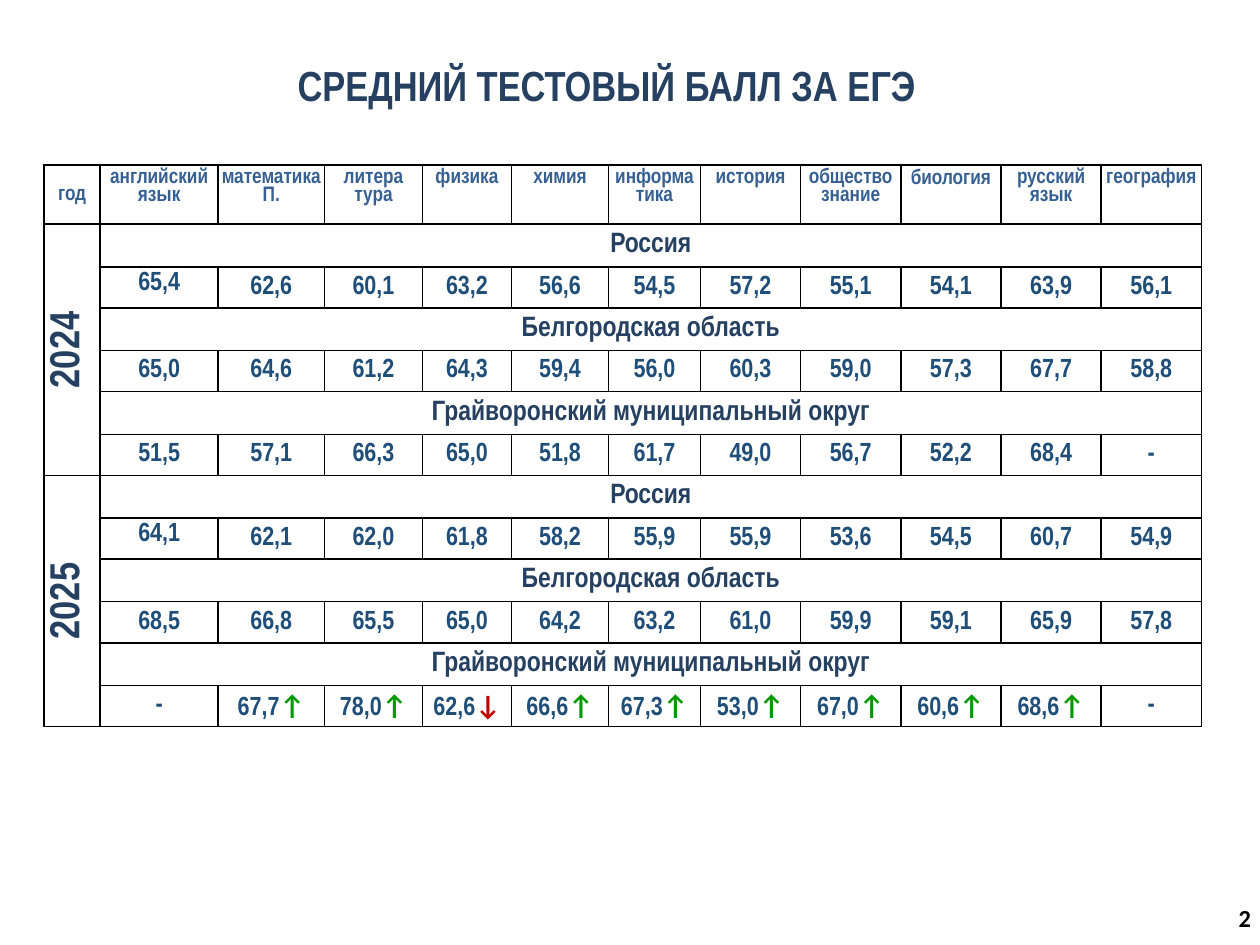
from dataclasses import dataclass

from pptx import Presentation
from pptx.dml.color import RGBColor
from pptx.enum.text import MSO_ANCHOR, PP_ALIGN
from pptx.oxml import parse_xml
from pptx.oxml.ns import nsdecls
from pptx.util import Cm, Pt

TITLE = "СРЕДНИЙ ТЕСТОВЫЙ БАЛЛ ЗА ЕГЭ"
PAGE_NUMBER = "2"
YEAR_HEADING = "год"
SUBJECTS = [
    ("английский язык", 2.38), ("математика\nП.", 2.14), ("литера\nтура", 1.98),
    ("физика", 1.79), ("химия", 1.96), ("информа\vтика", 1.85),
    ("история", 2.02), ("общество\vзнание", 2.02), ("биология", 2.02),
    ("русский язык", 2.02), ("география", 2.02),
]
RUSSIA, REGION, DISTRICT = (
    "Россия", "Белгородская область", "Грайворонский муниципальный округ")
SCORES = {
    "2024": {
        RUSSIA: "65,4 62,6 60,1 63,2 56,6 54,5 57,2 55,1 54,1 63,9 56,1",
        REGION: "65,0 64,6 61,2 64,3 59,4 56,0 60,3 59,0 57,3 67,7 58,8",
        DISTRICT: "51,5 57,1 66,3 65,0 51,8 61,7 49,0 56,7 52,2 68,4 -",
    },
    "2025": {
        RUSSIA: "64,1 62,1 62,0 61,8 58,2 55,9 55,9 53,6 54,5 60,7 54,9",
        REGION: "68,5 66,8 65,5 65,0 64,2 63,2 61,0 59,9 59,1 65,9 57,8",
        DISTRICT: "- 67,7↑ 78,0↑ 62,6↓ 66,6↑ 67,3↑ 53,0↑ 67,0↑ 60,6↑ 68,6↑ -",
    },
}
YEAR_WIDTH = 1.13
HEADER_HEIGHT, VALUE_HEIGHT = 1.19, 0.83
AREA_HEIGHTS = {RUSSIA: 0.75, REGION: 0.75, DISTRICT: 0.83}


@dataclass(frozen=True)
class Style:
    """Face, size and colour of one kind of text."""
    face: str
    size: int
    color: str


@dataclass(frozen=True)
class Theme:
    """Text styles and line settings of the slide."""
    title: Style = Style("Arial Narrow", 24, "254061")
    subject: Style = Style("Arial Narrow", 12, "376092")
    area: Style = Style("Arial Narrow", 16, "254061")
    score: Style = Style("Arial Narrow", 15, "1F4E79")
    rise: Style = Style("Calibri", 16, "009900")
    fall: Style = Style("Calibri", 16, "C00000")
    page: Style = Style("Calibri", 14, "000000")
    border: str = "000000"
    border_width: int = Pt(1)


THEME = Theme()
TRENDS = {"↑": THEME.rise, "↓": THEME.fall}


def apply_style(font, style):
    """Give a font its face, size, weight and colour."""
    font.name, font.size, font.bold = style.face, Pt(style.size), True
    font.color.rgb = RGBColor.from_string(style.color)


def write(frame, text, style, align=PP_ALIGN.CENTER, spacing=None):
    """Fill a text frame with uniformly styled paragraphs."""
    frame.text = text
    for paragraph in frame.paragraphs:
        paragraph.alignment = align
        paragraph.line_spacing = spacing
        apply_style(paragraph.font, style)


def write_score(frame, score):
    """Write a score and its trend arrow, if it has one."""
    if score[-1] not in TRENDS:
        write(frame, score, THEME.score)
        return
    paragraph = frame.paragraphs[0]
    paragraph.alignment = PP_ALIGN.CENTER
    for text, style in ((score[:-1], THEME.score), (score[-1], TRENDS[score[-1]])):
        run = paragraph.add_run()
        run.text = text
        apply_style(run.font, style)


def add_text(slide, box, text, style, align):
    """Add a wrapped text box centred vertically."""
    frame = slide.shapes.add_textbox(*map(Cm, box)).text_frame
    frame.word_wrap = True
    frame.vertical_anchor = MSO_ANCHOR.MIDDLE
    write(frame, text, style, align)
    return frame


def format_cell(cell):
    """Clear a cell's fill and give it margins and four borders."""
    cell.fill.background()
    cell.vertical_anchor = MSO_ANCHOR.MIDDLE
    cell.margin_left = cell.margin_right = 0
    cell.margin_top = cell.margin_bottom = Cm(0.09)
    properties = cell._tc.get_or_add_tcPr()
    for position, side in enumerate("LRTB"):
        line = parse_xml(f'<a:ln{side} {nsdecls("a")} w="{THEME.border_width}">'
                         f'<a:solidFill><a:srgbClr val="{THEME.border}"/></a:solidFill>'
                         f'</a:ln{side}>')
        properties.insert(position, line)


def add_scores(slide):
    """Add the table of average scores."""
    widths = [YEAR_WIDTH] + [width for _, width in SUBJECTS]
    heights = [HEADER_HEIGHT] + [
        height for areas in SCORES.values() for area in areas
        for height in (AREA_HEIGHTS[area], VALUE_HEIGHT)]
    table = slide.shapes.add_table(
        len(heights), len(widths), Cm(0.89), Cm(3.33),
        Cm(sum(widths)), Cm(sum(heights))).table
    table.first_row = table.horz_banding = False
    for column, width in zip(table.columns, widths):
        column.width = Cm(width)
    for row, height in zip(table.rows, heights):
        row.height = Cm(height)
    for cell in table.iter_cells():
        format_cell(cell)

    write(table.cell(0, 0).text_frame, YEAR_HEADING, THEME.subject)
    for column, (subject, _) in enumerate(SUBJECTS, 1):
        heading = table.cell(0, column)
        heading.vertical_anchor = MSO_ANCHOR.TOP
        write(heading.text_frame, subject, THEME.subject,
              spacing=None if subject == "биология" else 0.9)

    row = 1
    for year, areas in SCORES.items():
        year_cell = table.cell(row, 0)
        year_cell.merge(table.cell(row + 2 * len(areas) - 1, 0))
        year_cell._tc.get_or_add_tcPr().set("vert", "vert270")
        write(year_cell.text_frame, year, THEME.title)
        for area, scores in areas.items():
            area_cell = table.cell(row, 1)
            area_cell.merge(table.cell(row, len(SUBJECTS)))
            write(area_cell.text_frame, area, THEME.area)
            for column, score in enumerate(scores.split(), 1):
                score_cell = table.cell(row + 1, column)
                if area == DISTRICT:
                    score_cell.margin_top = score_cell.margin_bottom = 0
                write_score(score_cell.text_frame, score)
            if area == RUSSIA:
                table.cell(row + 1, 1).vertical_anchor = MSO_ANCHOR.TOP
            row += 2


def main():
    """Build the slide of average exam scores."""
    presentation = Presentation()
    presentation.slide_width, presentation.slide_height = Cm(25.4), Cm(19.05)
    slide = presentation.slides.add_slide(presentation.slide_layouts[6])
    add_text(slide, (5.69, 0.52, 13.08, 2.39), TITLE, THEME.title, PP_ALIGN.CENTER)
    add_scores(slide)
    page = add_text(slide, (24.71, 18.13, 0.64, 0.76), PAGE_NUMBER,
                    THEME.page, PP_ALIGN.RIGHT)
    page.margin_left = page.margin_right = Cm(0.13)
    presentation.save("out.pptx")


if __name__ == "__main__":
    main()
